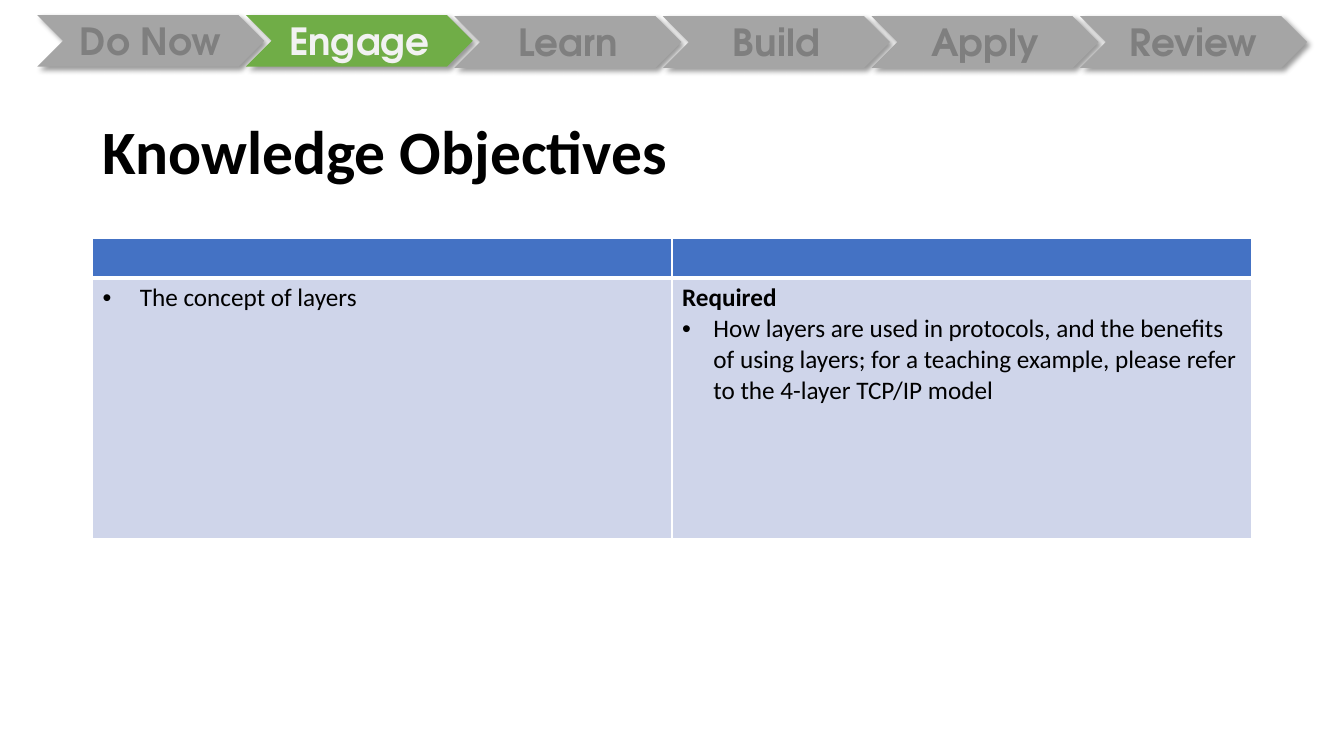
from lxml import etree
from pptx import Presentation, util as u
from pptx.dml.color import RGBColor
from pptx.enum import shapes, text
from pptx.oxml import parse_xml
from pptx.oxml.ns import qn

NS = 'xmlns:a="http://schemas.openxmlformats.org/drawingml/2006/main"'
STAGES = ["Do Now", "Engage", "Learn", "Build", "Apply", "Review"]
CURRENT = "Engage"
CONCEPT = "The concept of layers"
REQUIRED = ("How layers are used in protocols, and the benefits of using layers; "
            "for a teaching example, please refer to the 4-layer TCP/IP model")


def colour(value):
    return RGBColor.from_string(value)


def add_run(paragraph, words, size, ink, bold=False, face="Calibri"):
    run = paragraph.add_run()
    run.text = words
    run.font.name = face
    run.font.size = u.Pt(size)
    run.font.bold = bold
    run.font.color.rgb = colour(ink)


def add_shadow(stage):
    effects = stage._element.spPr.find(qn("a:effectLst"))
    effects.append(parse_xml(
        f'<a:outerShdw {NS} blurRad="{u.Pt(4)}" dist="{u.Pt(3)}" dir="2700000" '
        'algn="tl" rotWithShape="0"><a:srgbClr val="000000">'
        '<a:alpha val="40000"/></a:srgbClr></a:outerShdw>'))


def add_bullet(paragraph, indent):
    properties = paragraph._p.get_or_add_pPr()
    properties.set("marL", str(u.Cm(indent)))
    properties.set("indent", str(-u.Cm(indent)))
    font = etree.SubElement(properties, qn("a:buFont"))
    font.set("typeface", "Arial")
    etree.SubElement(properties, qn("a:buChar")).set("char", "•")


def border_cell(cell, bottom):
    properties = cell._tc.get_or_add_tcPr()
    for position, side in enumerate("LRTB"):
        width = u.Pt(bottom if side == "B" else 1)
        properties.insert(position, parse_xml(
            f'<a:ln{side} {NS} w="{width}"><a:solidFill>'
            f'<a:srgbClr val="FFFFFF"/></a:solidFill></a:ln{side}>'))


def add_progress(slide, left, top, width, height):
    stage_width = 5.72
    pitch = (width - stage_width) / (len(STAGES) - 1)
    for index, name in enumerate(STAGES):
        drop = 0 if index < 2 else 0.03
        stage = slide.shapes.add_shape(
            shapes.MSO_SHAPE.CHEVRON, u.Cm(left + index * pitch),
            u.Cm(top + drop), u.Cm(stage_width), u.Cm(height))
        active = name == CURRENT
        stage.fill.solid()
        stage.fill.fore_color.rgb = colour("70AD47" if active else "A5A5A5")
        stage.line.fill.background()
        stage.shadow.inherit = False
        add_shadow(stage)
        frame = stage.text_frame
        frame.vertical_anchor = text.MSO_ANCHOR.MIDDLE
        label = frame.paragraphs[0]
        label.alignment = text.PP_ALIGN.CENTER
        add_run(label, name, 26.7, "F2F2F2" if active else "7F7F7F", True,
                "TeX Gyre Adventor")


def add_title(slide, left, top, width, height):
    title = slide.shapes.add_textbox(
        u.Cm(left), u.Cm(top), u.Cm(width), u.Cm(height))
    frame = title.text_frame
    frame.word_wrap = True
    frame.vertical_anchor = text.MSO_ANCHOR.MIDDLE
    heading = frame.paragraphs[0]
    heading.line_spacing = 0.9
    add_run(heading, "Knowledge Objectives", 44, "000000", True)


def add_objectives(slide, left, top, width, height):
    objectives = slide.shapes.add_table(
        2, 2, u.Cm(left), u.Cm(top), u.Cm(width), u.Cm(height)).table
    header_height = 1
    objectives.rows[0].height = u.Cm(header_height)
    objectives.rows[1].height = u.Cm(height - header_height)
    for row, (fill, bottom) in enumerate([("4472C4", 3), ("CFD5EA", 1)]):
        for column in range(2):
            cell = objectives.cell(row, column)
            cell.fill.solid()
            cell.fill.fore_color.rgb = colour(fill)
            border_cell(cell, bottom)
            if row == 0:
                cell.margin_top = cell.margin_bottom = 0

    concept = objectives.cell(1, 0).text_frame.paragraphs[0]
    add_bullet(concept, 0.94)
    add_run(concept, CONCEPT, 18, "000000")

    required = objectives.cell(1, 1).text_frame
    add_run(required.paragraphs[0], "Required", 18, "000000", True)
    detail = required.add_paragraph()
    add_bullet(detail, 0.79)
    add_run(detail, REQUIRED, 18, "000000")


def main():
    deck = Presentation()
    deck.slide_width = u.Cm(33.87)
    deck.slide_height = u.Cm(19.05)
    slide = deck.slides.add_slide(deck.slide_layouts[6])
    add_progress(slide, 0.94, 0.38, 32, 1.3)
    add_title(slide, 2.33, 2.06, 29.21, 3.68)
    add_objectives(slide, 2.33, 6, 29.21, 7.57)
    deck.save("out.pptx")


if __name__ == "__main__":
    main()
